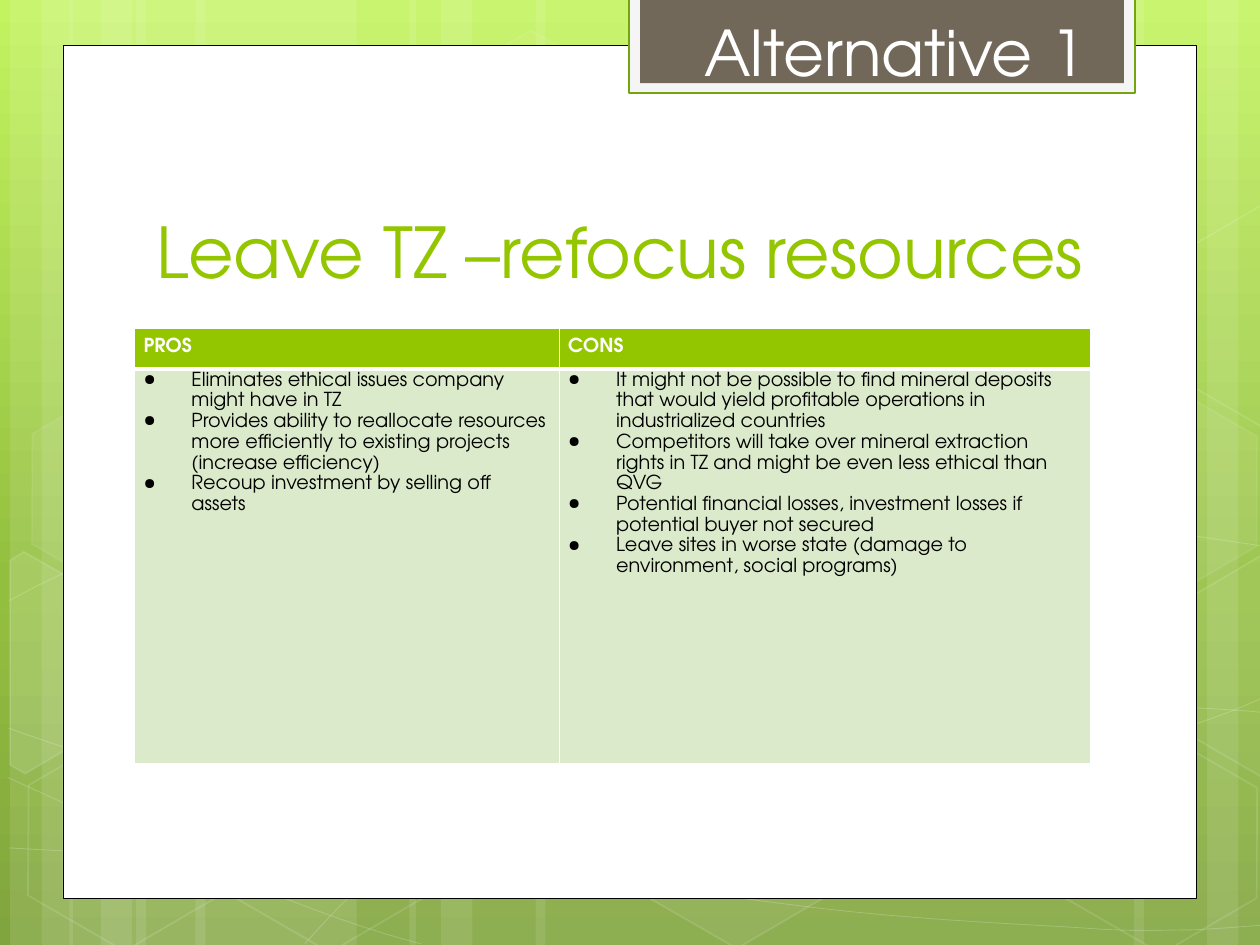
from copy import deepcopy

from lxml import etree
from pptx import Presentation
from pptx import util as u
from pptx.dml.color import RGBColor
from pptx.enum import shapes, text
from pptx.oxml.ns import qn

FONT = "TeX Gyre Adventor"
WHITE, GREEN, PALE = "FFFFFF", "94C600", "DCEACC"

# Table content: heading and points of each column
COLUMNS = [
    ("PROS", 3.37, [
        "Eliminates ethical issues company might have in TZ",
        "Provides ability to reallocate resources more efficiently to existing projects (increase efficiency)",
        "Recoup investment by selling off assets",
    ]),
    ("CONS", 4.21, [
        "It might not be possible to find mineral deposits that would yield profitable operations in industrialized countries",
        "Competitors will take over mineral extraction rights in TZ and might be even less ethical than QVG",
        "Potential financial losses, investment losses if potential buyer not secured",
        "Leave sites in worse state (damage to environment, social programs)",
    ]),
]
ROWS = [0.32, 3.13]

# Background: gradient stops, vertical bands (left, width)
STOPS = [(0, "C3F35F"), (0.62, "93BF3F"), (1, "81A53E")]
BANDS = [(1.08, 1.75), (0.08, 0.5), (0.33, 0.83), (1.55, 1.75), (0.55, 0.5), (0.8, 0.83),
         (7.33, 1.75), (9.58, 0.5), (9, 0.83), (4.25, 3.08), (3.25, 0.5), (3.5, 0.83)]

# Curves: start point, then Bezier points in threes
CURVES = [
    [(0.07, 6.73), (0.61, 6.76), (1.15, 6.79), (1.9, 6.78), (2.65, 6.77), (3.58, 6.75), (4.58, 6.65),
     (5.58, 6.55), (7, 6.36), (7.92, 6.17), (8.83, 5.98), (9.77, 5.68), (10.07, 5.51)],
    [(0.07, 4.77), (0.36, 4.61), (0.65, 4.46), (1.21, 4.31), (1.78, 4.16), (2.59, 3.94), (3.47, 3.87),
     (4.36, 3.8), (5.44, 3.79), (6.54, 3.87), (7.64, 3.95), (9.47, 4.26), (10.07, 4.34)],
    [(0.06, 6.17), (1.27, 6.72), (2.47, 7.27), (3.34, 7.49)],
    [(0.07, 5.78), (0.38, 5.89), (0.7, 6), (1.28, 6.16), (1.86, 6.31), (2.73, 6.56), (3.57, 6.73),
     (4.4, 6.9), (5.45, 7.08), (6.28, 7.18), (7.11, 7.29), (8, 7.33), (8.53, 7.36),
     (9.05, 7.4), (9.19, 7.38), (9.45, 7.38), (9.71, 7.37), (9.89, 7.35), (10.07, 7.34)],
    [(2.42, 7.49), (2.6, 7.29), (2.78, 7.09), (3.02, 6.91), (3.26, 6.73), (3.6, 6.53), (3.88, 6.39),
     (4.16, 6.25), (4.33, 6.19), (4.7, 6.09), (5.06, 5.99), (5.73, 5.85), (6.08, 5.78),
     (6.44, 5.71), (6.49, 5.71), (6.8, 5.69), (7.11, 5.66), (7.6, 5.63), (7.94, 5.62),
     (8.29, 5.61), (8.86, 5.62), (8.86, 5.62), (9.08, 5.62), (9.31, 5.62), (9.53, 5.62),
     (9.71, 5.63), (9.88, 5.64), (9.97, 5.65), (10.06, 5.66), (10.03, 5.65), (10.06, 5.66)],
]

# Hexagons: left, top, fill opacity (None for no fill), line opacity
HEXAGONS = [(3.34, 0.36, 4, 8), (4.97, 5.89, 6, 12), (0.11, 5.91, None, 12), (0.14, 3.12, 7, 8),
            (1.74, 5.92, None, 12), (7.53, 4.53, 10, 12), (8.34, 5.93, None, 12), (8.34, 3.14, 7, 8)]

# Hexagons cut by the slide edge: points, fill opacity
CUT_HEXAGONS = [
    ([(0.08, 4.45), (0.19, 4.38), (0.96, 4.82), (0.95, 5.7), (0.2, 6.14), (0.08, 6.07)], 10),
    ([(9.26, 4.85), (10.01, 4.41), (10.09, 4.46), (10.09, 6.13), (10.02, 6.17), (9.26, 5.73)], 4),
    ([(9.26, 2.07), (10.01, 1.63), (10.1, 1.68), (10.09, 3.35), (10.02, 3.39), (9.26, 2.95)], None),
]


def rgb(color):
    return RGBColor.from_string(color)


def paint(fill, color, opacity=100):
    if color is None or opacity is None:
        fill.background()
        return
    fill.solid()
    fill.fore_color.rgb = rgb(color)
    if opacity < 100:
        clr = fill._xPr.find(".//" + qn("a:srgbClr"))
        etree.SubElement(clr, qn("a:alpha"), val=str(opacity * 1000))


def style(sp, fill=None, opacity=100, line=None, width=1, line_opacity=100):
    sp.shadow.inherit = False
    paint(sp.fill, fill, opacity)
    paint(sp.line.fill, line, line_opacity)
    if line:
        sp.line.width = u.Pt(width)


def add_box(kind, *at):
    return s.shapes.add_shape(kind, *map(u.Inches, at))


def add_outline(points, close):
    pts = [(u.Inches(x), u.Inches(y)) for x, y in points]
    builder = s.shapes.build_freeform(*pts[0])
    builder.add_line_segments(pts[1:], close=close)
    return builder.convert_to_shape()


def add_curve(points):
    """Turn each three line segments of an outline into one Bezier segment."""
    sp = add_outline(points, False)
    segments = sp._element.findall(".//" + qn("a:lnTo"))
    for i in range(0, len(segments), 3):
        trio = segments[i:i + 3]
        bezier = etree.Element(qn("a:cubicBezTo"))
        trio[0].addprevious(bezier)
        for seg in trio:
            bezier.append(seg[0])
            seg.getparent().remove(seg)
    return sp


def format_text(p, size, color, bold=False):
    for r in p.runs:
        r.font.name, r.font.size, r.font.bold = FONT, u.Pt(size), bold
        r.font.color.rgb = rgb(color)


def add_label(words, size, color, at, anchor, wrap):
    tf = s.shapes.add_textbox(*map(u.Inches, at)).text_frame
    tf.text = words
    tf.word_wrap, tf.vertical_anchor = wrap, anchor
    if not wrap:
        tf.auto_size = text.MSO_AUTO_SIZE.SHAPE_TO_FIT_TEXT
    format_text(tf.paragraphs[0], size, color)


def fill_cell(cell, lines, fill, color, bold, spacing, borders, bullet=None):
    cell.margin_left = cell.margin_right = u.Inches(0.07)
    cell.margin_top = cell.margin_bottom = 0
    cell.text_frame.text = "\n".join(lines)
    for p in cell.text_frame.paragraphs:
        p.line_spacing = spacing
        format_text(p, 11, color, bold)
        if bullet:
            pPr = p._p.get_or_add_pPr()
            pPr.set("marL", str(u.Inches(0.38)))
            pPr.set("indent", str(-u.Inches(0.38)))
            etree.SubElement(pPr, qn("a:buSzPct"), val="80000")
            etree.SubElement(pPr, qn("a:buChar"), char=bullet)
    tcPr = cell._tc.get_or_add_tcPr()
    for side, width in zip("LRTB", borders):
        ln = etree.SubElement(tcPr, qn("a:ln" + side), w=str(u.Pt(width)))
        if width:
            solid = etree.SubElement(ln, qn("a:solidFill"))
            etree.SubElement(solid, qn("a:srgbClr"), val=WHITE)
        else:
            etree.SubElement(ln, qn("a:noFill"))
    cell.fill.solid()
    cell.fill.fore_color.rgb = rgb(fill)


prs = Presentation()
prs.slide_width, prs.slide_height = u.Inches(10), u.Inches(7.5)
s = prs.slides.add_slide(prs.slide_layouts[6])

# Background gradient
bg = s.background.fill
bg.gradient()
bg.gradient_angle = 270
gs_list = s._element.find(".//" + qn("a:gsLst"))
gs_list.append(deepcopy(gs_list[-1]))
for stop, (position, color) in zip(bg.gradient_stops, STOPS):
    stop.position = position
    stop.color.rgb = rgb(color)

# Background decoration
for left, width in BANDS:
    style(add_box(shapes.MSO_SHAPE.RECTANGLE, left, 0, width, 7.5), WHITE, 10)
for curve in CURVES:
    style(add_curve(curve), line=WHITE, width=0.5, line_opacity=20)
for left, top, opacity, line_opacity in HEXAGONS:
    sp = add_box(shapes.MSO_SHAPE.HEXAGON, left, top, 1.75, 1.52)
    sp.adjustments[0] = 0.285
    sp.rotation = 30
    style(sp, WHITE, opacity, WHITE, 1, line_opacity)
for points, opacity in CUT_HEXAGONS:
    style(add_outline(points, True), WHITE, opacity, WHITE, 1, 12)

# White panel and top tab
style(add_box(shapes.MSO_SHAPE.RECTANGLE, 0.5, 0.36, 9, 6.77), WHITE, line="000000", width=0.5)
style(add_box(shapes.MSO_SHAPE.RECTANGLE, 4.99, -0.02, 4.02, 0.76), "F5F5F5", line="74A510", width=1.25)
style(add_box(shapes.MSO_SHAPE.RECTANGLE, 5.08, -0.02, 3.84, 0.68), "71685A")

# Title
add_label("Leave TZ –refocus resources", 40, GREEN, (1.14, 1.12, 7.68, 1.25), text.MSO_ANCHOR.BOTTOM, True)

# Pros and cons table, ruled only between its cells
table = s.shapes.add_table(2, 2, *map(u.Inches, (1.07, 2.61, 7.58, 3.46))).table
for row, height in zip(table.rows, ROWS):
    row.height = u.Inches(height)
for i, (heading, width, points) in enumerate(COLUMNS):
    table.columns[i].width = u.Inches(width)
    sides = (i, 1 - i)
    fill_cell(table.cell(0, i), [heading], GREEN, WHITE, True, 1.5, (*sides, 0, 3))
    fill_cell(table.cell(1, i), points, PALE, "000000", False, 1.15, (*sides, 3, 0), "●")

# Tab label
add_label("Alternative 1", 36, WHITE, (5.49, 0.06, 3.29, 0.71), text.MSO_ANCHOR.TOP, False)

prs.save("out.pptx")
